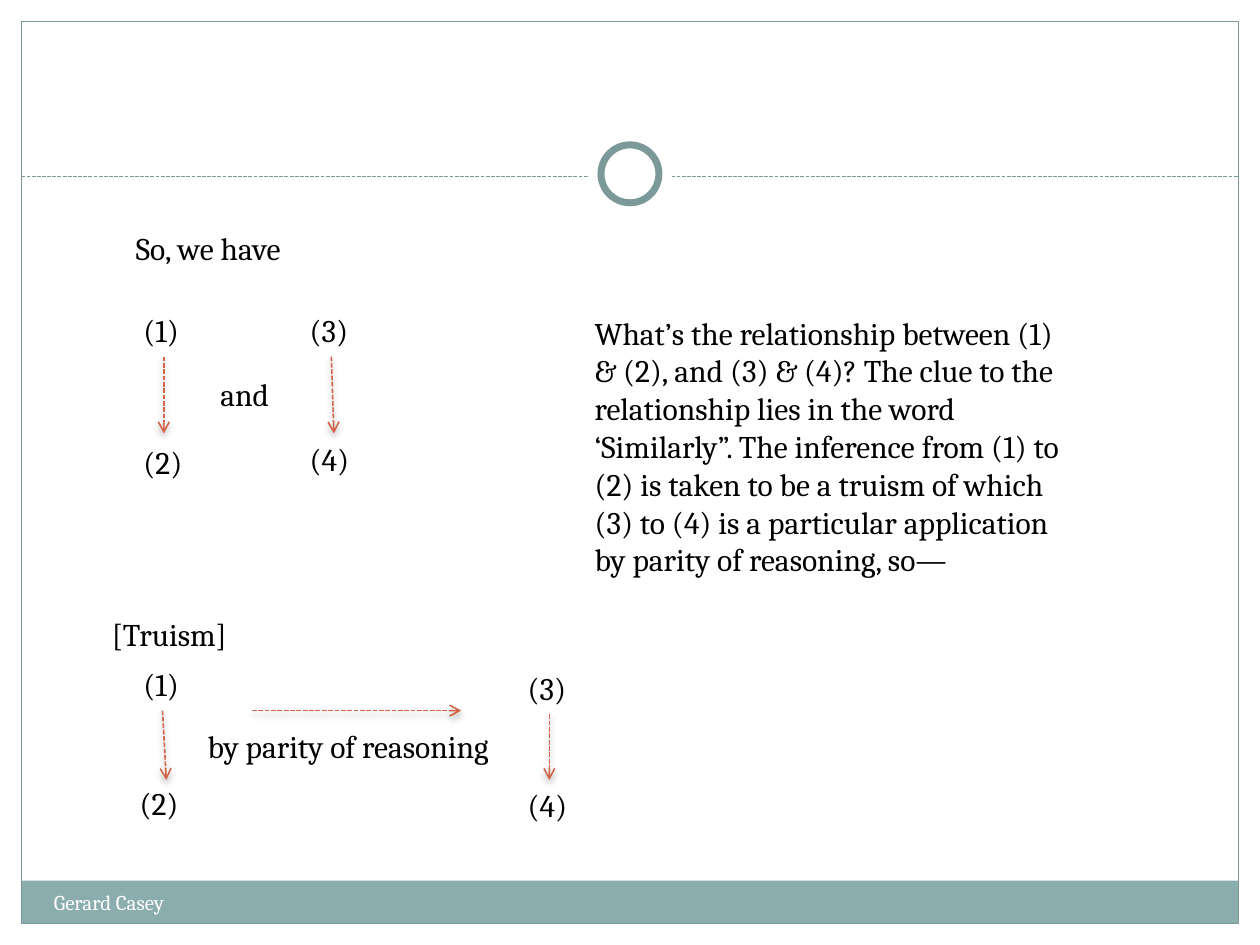
from dataclasses import dataclass

from lxml import etree
from pptx import Presentation
from pptx import util as u
from pptx.dml.color import RGBColor
from pptx.enum import dml, shapes
from pptx.oxml import ns


@dataclass(frozen=True)
class Theme:
    font: str = "Cambria"
    body: int = 18
    footer: int = 12
    ink: str = "000000"
    paper: str = "FFFFFF"
    frame: str = "7C999A"
    band: str = "8CADAE"
    arrow: str = "D16349"


THEME = Theme()
LINE_HEIGHT = 0.4
MARGIN = 0.17
WIDTH, HEIGHT = 10, 7.5

# Content: text, left, top, width
FOOTER = ("Gerard Casey", 0.33, 7.01, 3.92)
LABELS = [
    ("So, we have", 0.98, 1.77, 7.32),
    ("(1)", 1.04, 2.42, 0.51),
    ("(2)", 1.04, 3.47, 0.61),
    ("(3)", 2.36, 2.42, 0.54),
    ("(4)", 2.36, 3.44, 0.59),
    ("and", 1.65, 2.93, 0.62),
    ("[Truism]", 0.79, 4.83, 1.2),
    ("(1)", 1.04, 5.23, 0.5),
    ("(2)", 1.01, 6.17, 0.53),
    ("(3)", 4.09, 5.26, 0.53),
    ("(4)", 4.09, 6.19, 0.53),
    ("by parity of reasoning", 1.55, 5.72, 2.63),
]
QUESTION = (
    "What’s the relationship between (1) & (2), and (3) & (4)? The clue to the "
    "relationship lies in the word ‘Similarly”. The inference from (1) to (2) is "
    "taken to be a truism of which (3) to (4) is a particular application by "
    "parity of reasoning, so—", 4.62, 2.44, 4.05)

# Inference arrows: start, end
ARROWS = [
    ((1.3, 2.83), (1.3, 3.44)),
    ((2.63, 2.83), (2.65, 3.44)),
    ((1.29, 5.64), (1.32, 6.19)),
    ((4.36, 5.67), (4.36, 6.19)),
    ((2, 5.64), (3.66, 5.64)),
]


def rgb(colour):
    return RGBColor.from_string(colour)


def add_figure(page, kind, left, top, width, height, fill=None, line=None, weight=0.75):
    figure = page.shapes.add_shape(kind, *map(u.Inches, (left, top, width, height)))
    figure.shadow.inherit = False
    if fill:
        figure.fill.solid()
        figure.fill.fore_color.rgb = rgb(fill)
    else:
        figure.fill.background()
    if line:
        figure.line.color.rgb = rgb(line)
        figure.line.width = u.Pt(weight)
    else:
        figure.line.fill.background()


def add_circle(page, centre, diameter, **style):
    left, top = (c - diameter / 2 for c in centre)
    add_figure(page, shapes.MSO_SHAPE.OVAL, left, top, diameter, diameter, **style)


def add_text(page, words, left, top, width, height=LINE_HEIGHT,
             size=THEME.body, colour=THEME.ink):
    box = page.shapes.add_textbox(*map(u.Inches, (left, top, width, height)))
    box.text_frame.word_wrap = True
    para = box.text_frame.paragraphs[0]
    para.text = words
    para.font.name = THEME.font
    para.font.size = u.Pt(size)
    para.font.color.rgb = rgb(colour)


def add_dashes(page, start, end, colour, weight):
    """Draw a dashed line and return it with its empty effect list."""
    line = page.shapes.add_connector(
        shapes.MSO_CONNECTOR.STRAIGHT, *map(u.Inches, (*start, *end)))
    line.line.color.rgb = rgb(colour)
    line.line.width = u.Pt(weight)
    line.line.dash_style = dml.MSO_LINE.SQUARE_DOT
    effects = etree.SubElement(line._element.spPr, ns.qn("a:effectLst"))
    return line, effects


def add_arrow(page, start, end):
    line, effects = add_dashes(page, start, end, THEME.arrow, 0.9)
    etree.SubElement(line.line._get_or_add_ln(), ns.qn("a:tailEnd"), type="arrow")
    shadow = etree.SubElement(
        effects, ns.qn("a:outerShdw"), blurRad=str(u.Pt(4)), dist=str(u.Pt(2)),
        dir="5400000", rotWithShape="0")
    tint = etree.SubElement(shadow, ns.qn("a:srgbClr"), val=THEME.ink)
    etree.SubElement(tint, ns.qn("a:alpha"), val="35000")


def main():
    deck = Presentation()
    deck.slide_width, deck.slide_height = u.Inches(WIDTH), u.Inches(HEIGHT)
    page = deck.slides.add_slide(deck.slide_layouts[6])

    # Footer band and page frame
    inner = WIDTH - 2 * MARGIN
    rectangle = shapes.MSO_SHAPE.RECTANGLE
    add_figure(page, rectangle, MARGIN, 6.99, inner, 0.34, fill=THEME.band)
    add_figure(page, rectangle, MARGIN, MARGIN, inner, HEIGHT - 2 * MARGIN,
               line=THEME.frame)

    # Title rule with a ring in the middle
    add_dashes(page, (MARGIN, 1.4), (WIDTH - MARGIN, 1.4), THEME.frame, 0.75)
    centre = (WIDTH / 2, 1.38)
    add_circle(page, centre, 0.67, fill=THEME.paper)
    add_circle(page, centre, 0.46, fill=THEME.paper, line=THEME.frame, weight=4)

    # Words
    add_text(page, *FOOTER, size=THEME.footer, colour=THEME.paper)
    for label in LABELS:
        add_text(page, *label)
    add_text(page, *QUESTION, height=2.52)

    # Arrows
    for start, end in ARROWS:
        add_arrow(page, start, end)

    deck.save("out.pptx")


if __name__ == "__main__":
    main()
